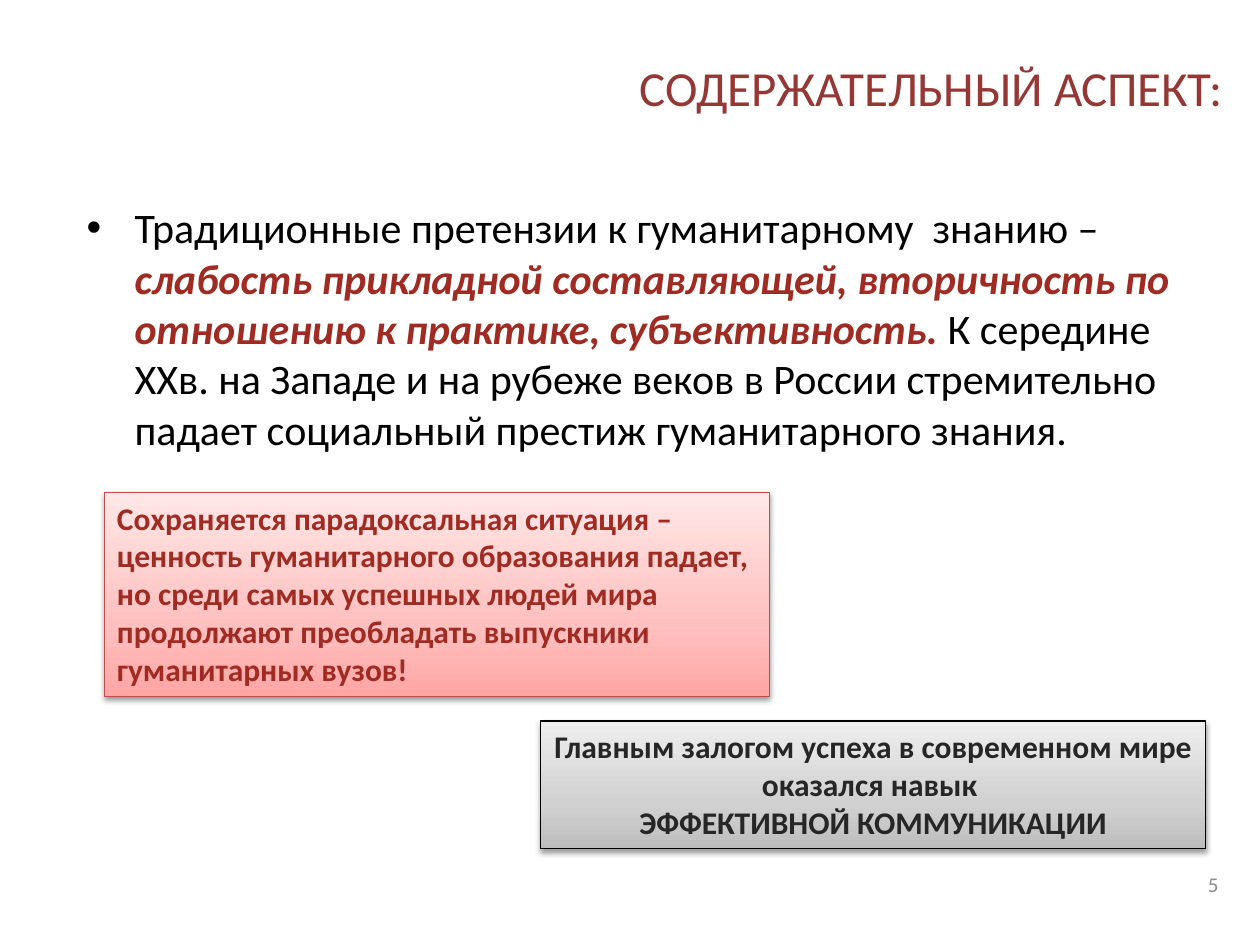
from copy import deepcopy

from lxml import etree
from pptx import Presentation
from pptx import util as u
from pptx.dml.color import RGBColor
from pptx.enum import shapes, text
from pptx.oxml import ns

WIDTH, HEIGHT = u.Inches(10), u.Inches(7.5)
FONT = "Calibri"
RED = "9F2B22"
ALIGN = text.PP_ALIGN
ANCHOR = text.MSO_ANCHOR


def color(value):
    return RGBColor.from_string(value)


def place(left, top, width, height):
    """Turn shares of the slide into a box."""
    return [round(share * side) for share, side in
            zip((left, top, width, height), (WIDTH, HEIGHT) * 2)]


def add_element(parent, tag, **attributes):
    return etree.SubElement(parent, ns.qn(tag), attributes)


def write_runs(paragraph, runs, align=ALIGN.LEFT, **base):
    """Write (wording, format) pairs over a shared base format."""
    paragraph.alignment = align
    for wording, extra in runs:
        run = paragraph.add_run()
        run.text = wording
        look = {"name": FONT, **base, **extra}
        run.font.color.rgb = color(look.pop("ink"))
        for key, value in look.items():
            setattr(run.font, key, value)


def add_text(slide, box, anchor):
    frame = slide.shapes.add_textbox(*box).text_frame
    frame.word_wrap = True
    frame.vertical_anchor = anchor
    return frame.paragraphs[0]


def add_title(slide, box, wording):
    write_runs(add_text(slide, box, ANCHOR.MIDDLE), [(wording, {})],
               ALIGN.RIGHT, size=u.Pt(28), ink="953735")


def add_body(slide, box, runs):
    paragraph = add_text(slide, box, ANCHOR.TOP)
    # Hanging bullet
    properties = paragraph._p.get_or_add_pPr()
    indent = u.Inches(0.38)
    properties.set("marL", str(indent))
    properties.set("indent", str(-indent))
    add_element(properties, "a:buFont", typeface="Arial")
    add_element(properties, "a:buChar", char="•")
    write_runs(paragraph, runs, size=u.Pt(24), ink="000000")


def add_page_number(slide, box, number):
    write_runs(add_text(slide, box, ANCHOR.MIDDLE), [(number, {})],
               ALIGN.RIGHT, size=u.Pt(12), ink="8C8C8C")


def add_callout(slide, box, lines, shades, outline, ink, align):
    callout = slide.shapes.add_shape(shapes.MSO_SHAPE.RECTANGLE, *box)

    # Three-stop gradient, darkest at the bottom
    callout.fill.gradient()
    callout.fill.gradient_angle = 90
    stop_list = callout._element.spPr.find(".//" + ns.qn("a:gsLst"))
    stop_list.append(deepcopy(stop_list[0]))
    for stop, position, shade in zip(callout.fill.gradient_stops, (0, 0.35, 1), shades):
        stop.position = position
        stop.color.rgb = color(shade)
    callout.line.color.rgb = color(outline)
    callout.line.width = u.Pt(0.75)

    # Soft shadow straight below
    callout.shadow.inherit = False
    effects = callout._element.spPr.find(ns.qn("a:effectLst"))
    shadow = add_element(effects, "a:outerShdw", blurRad="40000", dist="20000",
                         dir="5400000", rotWithShape="0")
    add_element(add_element(shadow, "a:srgbClr", val="000000"), "a:alpha", val="38000")

    frame = callout.text_frame
    frame.word_wrap = True
    frame.auto_size = text.MSO_AUTO_SIZE.SHAPE_TO_FIT_TEXT
    frame.vertical_anchor = ANCHOR.TOP
    for index, line in enumerate(lines):
        paragraph = frame.add_paragraph() if index else frame.paragraphs[0]
        write_runs(paragraph, [(line, {})], align, size=u.Pt(18), bold=True, ink=ink)


def main():
    deck = Presentation()
    deck.slide_width, deck.slide_height = WIDTH, HEIGHT
    slide = deck.slides.add_slide(deck.slide_layouts[6])

    add_title(slide, place(0.067, 0.04, 0.913, 0.103), "СОДЕРЖАТЕЛЬНЫЙ АСПЕКТ:")

    add_body(slide, place(0.059, 0.207, 0.9, 0.284), [
        ("Традиционные претензии к гуманитарному  знанию – ", {}),
        ("слабость прикладной составляющей, вторичность по отношению к практике, "
         "субъективность. ", {"ink": RED, "bold": True, "italic": True}),
        ("К середине XXв. на Западе и на рубеже веков в России стремительно падает "
         "социальный престиж гуманитарного знания.", {}),
    ])

    add_page_number(slide, place(0.744, 0.909, 0.233, 0.053), "5")

    # Paradox and its answer
    add_callout(slide, place(0.083, 0.521, 0.528, 0.216), [
        "Сохраняется парадоксальная ситуация – ценность гуманитарного образования "
        "падает, но среди самых успешных людей мира продолжают преобладать выпускники "
        "гуманитарных вузов!",
    ], ("FFA6A5", "FFC0BF", "FFE7E7"), "BF4C48", RED, ALIGN.LEFT)
    add_callout(slide, place(0.429, 0.763, 0.528, 0.135), [
        "Главным залогом успеха в современном мире оказался навык ",
        "ЭФФЕКТИВНОЙ КОММУНИКАЦИИ",
    ], ("BDBDBD", "D1D1D1", "EEEEEE"), "000000", "262626", ALIGN.CENTER)

    deck.save("out.pptx")


if __name__ == "__main__":
    main()
